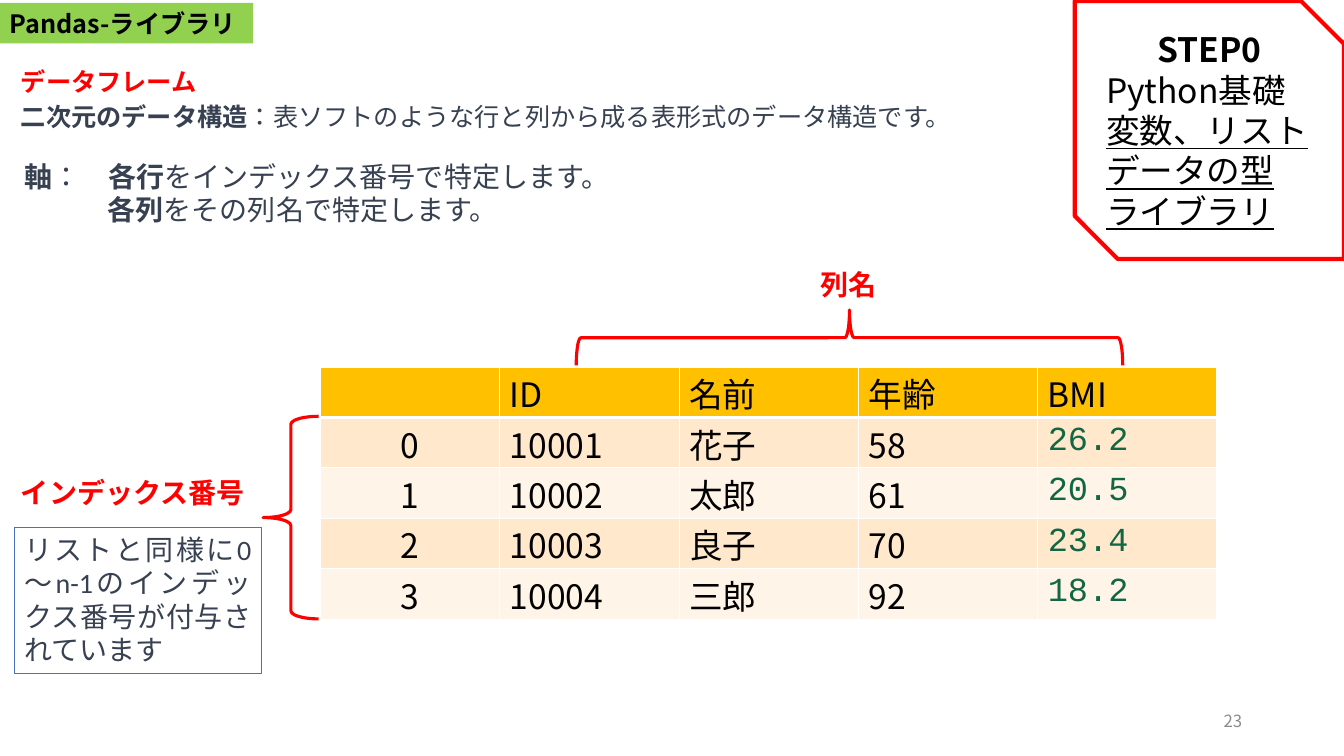
from lxml import etree
from pptx import Presentation
from pptx.dml.color import RGBColor
from pptx.enum.lang import MSO_LANGUAGE_ID
from pptx.enum.shapes import MSO_SHAPE
from pptx.enum.text import MSO_ANCHOR, PP_ALIGN
from pptx.oxml.ns import qn
from pptx.util import Inches, Pt

LEFT, CENTER, RIGHT, JUSTIFY = PP_ALIGN.LEFT, PP_ALIGN.CENTER, PP_ALIGN.RIGHT, PP_ALIGN.JUSTIFY
RECT, BRACE, SNIP = MSO_SHAPE.RECTANGLE, MSO_SHAPE.LEFT_BRACE, MSO_SHAPE.SNIP_2_DIAG_RECTANGLE
TOP, MIDDLE = MSO_ANCHOR.TOP, MSO_ANCHOR.MIDDLE
JAPANESE = MSO_LANGUAGE_ID.JAPANESE
NOTO, CALIBRI, COURIER = "Noto Sans CJK JP", "Calibri", "Courier New"
C = {"green": "92D050", "red": "FF0000", "black": "000000", "white": "FFFFFF",
     "slate": "374151", "gray": "8C8C8C", "blue": "4472C4", "gold": "FFC000",
     "odd": "FFE8CC", "even": "FFF4E7", "number": "116644"}

prs = Presentation()
prs.slide_width, prs.slide_height = Inches(13.33), Inches(7.5)
s = prs.slides.add_slide(prs.slide_layouts[6])


def write(tf, text, size=20, font=CALIBRI, color="slate", bold=False, underline=False,
          align=LEFT, margin=0, indent=0, spacing=None):
    """Add a paragraph; text between ** marks gets the opposite weight."""
    p = tf.paragraphs[0]
    if p.runs:
        p = tf.add_paragraph()
    p.alignment, p.line_spacing = align, spacing
    if margin:
        pPr = p._p.get_or_add_pPr()
        pPr.set("marL", str(Inches(margin)))
        pPr.set("indent", str(Inches(indent)))
    for i, part in enumerate(text.split("**")):
        if not part:
            continue
        r = p.add_run()
        r.text = part
        f = r.font
        f.size, f.name, f.underline = Pt(size), font, underline
        f.bold = bold != (i % 2 == 1)
        f.language_id = JAPANESE
        f.color.rgb = RGBColor.from_string(C[color])
        etree.SubElement(r._r.rPr, qn("a:ea")).set("typeface", NOTO)


def add(x, y, w, h, kind=None, fill=None, line=None, width=1.0, anchor=TOP):
    """Add a text box, or a preset shape when kind is given."""
    box = [Inches(v) for v in (x, y, w, h)]
    if kind is None:
        sp = s.shapes.add_textbox(*box)
    else:
        sp = s.shapes.add_shape(kind, *box)
        sp.shadow.inherit = False
    if fill:
        sp.fill.solid()
        sp.fill.fore_color.rgb = RGBColor.from_string(C[fill])
    else:
        sp.fill.background()
    if line:
        sp.line.color.rgb = RGBColor.from_string(C[line])
        sp.line.width = Pt(width)
    else:
        sp.line.fill.background()
    sp.text_frame.word_wrap = True
    sp.text_frame.vertical_anchor = anchor
    return sp


# Headings and explanation
title = add(0, 0.03, 2.51, 0.4, RECT, fill="green")
write(title.text_frame, "Pandas-ライブラリ", size=18, font=NOTO, color="black", bold=True, spacing=Pt(21.6))
for x, y, w, h, text, size, color, bold in [
    (0.11, 4.67, 2.59, 0.44, "インデックス番号", 20, "red", True),
    (8.04, 2.6, 0.82, 0.44, "列名", 20, "red", True),
    (0.11, 0.61, 2.4, 0.4, "データフレーム", 18, "red", True),
    (0.11, 0.96, 9.46, 0.4,
     "**二次元のデータ構造**：表ソフトのような行と列から成る表形式のデータ構造です。", 18, "slate", False),
]:
    write(add(x, y, w, h).text_frame, text, size=size, color=color, bold=bold)

axes = add(0.14, 1.53, 6.03, 0.77).text_frame
write(axes, "**軸**：　**各行**をインデックス番号で特定します。", align=JUSTIFY, margin=0.59, indent=-0.59)
write(axes, "**各列**をその列名で特定します。", align=JUSTIFY, margin=0.83)

# Data frame
rows = [("", "ID", "名前", "年齢", "BMI"),
        ("0", "10001", "花子", "58", "26.2"),
        ("1", "10002", "太郎", "61", "20.5"),
        ("2", "10003", "良子", "70", "23.4"),
        ("3", "10004", "三郎", "92", "18.2")]
table = s.shapes.add_table(5, 5, Inches(3.18), Inches(3.64), Inches(8.89), Inches(2.5)).table
for i, row in enumerate(rows):
    for j, text in enumerate(row):
        cell = table.cell(i, j)
        tcPr = cell._tc.get_or_add_tcPr()
        for side in ("lnL", "lnR", "lnT", "lnB"):
            thick = (i, side) in ((0, "lnB"), (1, "lnT"))
            ln = etree.SubElement(tcPr, qn("a:" + side), w=str(Pt(3 if thick else 1)))
            fill = etree.SubElement(ln, qn("a:solidFill"))
            etree.SubElement(fill, qn("a:srgbClr"), val=C["white"])
        cell.fill.solid()
        band = "gold" if i == 0 else "odd" if i % 2 else "even"
        cell.fill.fore_color.rgb = RGBColor.from_string(C[band])
        is_bmi = i > 0 and j == 4
        cell.margin_top = Inches(0.05 if is_bmi else 0.1)
        cell.margin_bottom = 0
        write(cell.text_frame, text, size=24, font=COURIER if is_bmi else NOTO,
              color="number" if is_bmi else "black", align=LEFT if j else CENTER,
              spacing=None if is_bmi else Pt(28.8))
        if not text:
            cell.text_frame.paragraphs[0].font.size = Pt(24)

# Braces over the columns and beside the rows
columns = add(8.15, 0.64, 0.55, 5.42, BRACE, line="red", width=2.25)
columns.rotation = 90
index = add(2.61, 4.13, 0.55, 2.01, BRACE, line="red", width=2.25)
index.adjustments[0] = 0.144

# Index note, step badge and page number
note = add(0.14, 5.23, 2.45, 1.45, RECT, line="blue", width=0.75)
write(note.text_frame, "リストと同様に0～n-1のインデックス番号が付与されています", align=JUSTIFY)

badge = add(10.66, 0.01, 2.67, 2.56, SNIP, fill="white", line="red", width=3, anchor=MIDDLE)
for text, bold, underline, align in [
    ("STEP0", True, False, CENTER),
    ("Python基礎", False, False, JUSTIFY),
    ("変数、リスト", False, True, LEFT),
    ("データの型", False, True, LEFT),
    ("ライブラリ", False, True, LEFT),
]:
    write(badge.text_frame, text, size=24, font=NOTO, color="black", bold=bold,
          underline=underline, align=align, spacing=Pt(28.8))

page = add(9.42, 6.95, 3, 0.4, anchor=MIDDLE)
write(page.text_frame, "23", size=12, font=NOTO, color="gray", align=RIGHT)

prs.save("out.pptx")
